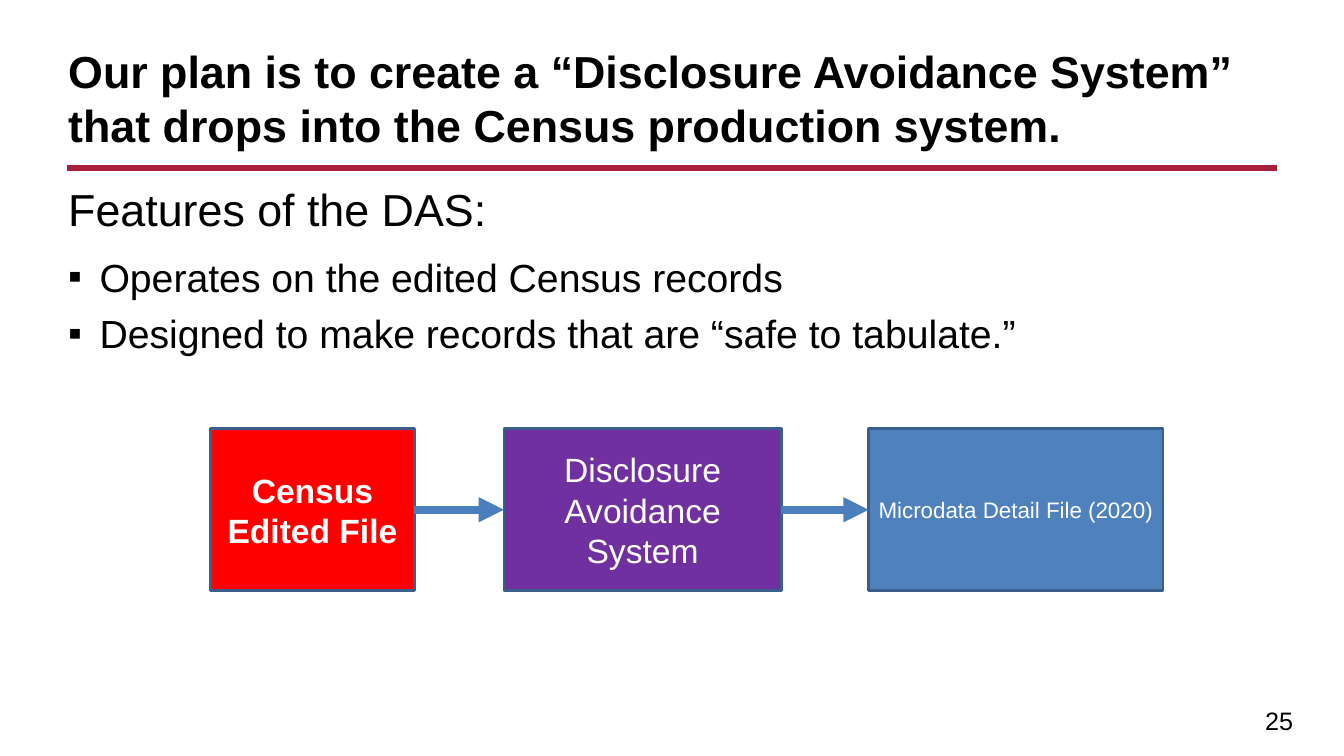
"""Build the Disclosure Avoidance System slide."""
from dataclasses import dataclass

from lxml import etree
from pptx import Presentation
from pptx.dml.color import RGBColor
from pptx.enum import shapes, text
from pptx.oxml import ns
from pptx.util import Cm, Pt

COLORS = {"black": "000000", "white": "FFFFFF", "rule": "A9203D", "red": "FF0000",
          "purple": "7030A0", "blue": "4F81BD", "border": "3A5F8C", "arrow": "4B7EBC"}
BOX_TOP, BOX_HEIGHT = 10.8, 4.09
LEFT, WIDTH = 1.47, 30.68


@dataclass
class Para:
    text: str
    size: float
    color: str = "black"
    bold: bool = False
    bullet: bool = False
    fmt: dict | None = None


@dataclass
class Box:
    left: float
    width: float
    fill: str
    para: Para


@dataclass
class TextBox:
    left: float
    top: float
    width: float
    height: float
    anchor: text.MSO_ANCHOR
    paras: list[Para]


def rgb(name: str) -> RGBColor:
    return RGBColor.from_string(COLORS[name])


def apply(target, fmt: dict) -> None:
    for name, value in fmt.items():
        setattr(target, name, value)


def write(tf, paras: list[Para], anchor: text.MSO_ANCHOR) -> None:
    apply(tf, {"word_wrap": True, "vertical_anchor": anchor})
    for i, para in enumerate(paras):
        p = tf.add_paragraph() if i else tf.paragraphs[0]
        apply(p, para.fmt or {})
        if para.bullet:
            pPr = p._p.get_or_add_pPr()
            pPr.set("marL", str(Cm(0.79)))
            pPr.set("indent", str(-Cm(0.79)))
            etree.SubElement(pPr, ns.qn("a:buFont")).set("typeface", "Arial")
            etree.SubElement(pPr, ns.qn("a:buChar")).set("char", "▪")
        r = p.add_run()
        r.text = para.text
        apply(r.font, {"name": "Arial", "size": Pt(para.size), "bold": para.bold})
        r.font.color.rgb = rgb(para.color)


def add_text(s, box: TextBox) -> None:
    sp = s.shapes.add_textbox(Cm(box.left), Cm(box.top), Cm(box.width), Cm(box.height))
    write(sp.text_frame, box.paras, box.anchor)


def add_box(s, box: Box) -> None:
    sp = s.shapes.add_shape(shapes.MSO_SHAPE.RECTANGLE, Cm(box.left), Cm(BOX_TOP),
                            Cm(box.width), Cm(BOX_HEIGHT))
    sp.shadow.inherit = False
    sp.fill.solid()
    sp.fill.fore_color.rgb = rgb(box.fill)
    sp.line.color.rgb = rgb("border")
    sp.line.width = Pt(2)
    write(sp.text_frame, [box.para], text.MSO_ANCHOR.MIDDLE)


def add_line(s, start: float, end: float, y: float, color: str, width: float,
             arrow: bool = False) -> None:
    cx = s.shapes.add_connector(shapes.MSO_CONNECTOR.STRAIGHT,
                                Cm(start), Cm(y), Cm(end), Cm(y))
    cx.line.color.rgb = rgb(color)
    cx.line.width = Pt(width)
    if arrow:
        etree.SubElement(cx.line._get_or_add_ln(), ns.qn("a:tailEnd")).set("type", "triangle")
    etree.SubElement(cx._element.spPr, ns.qn("a:effectLst"))


def main() -> None:
    prs = Presentation()
    apply(prs, {"slide_width": Cm(33.87), "slide_height": Cm(19.05)})
    s = prs.slides.add_slide(prs.slide_layouts[6])

    bullet_fmt = {"space_before": Pt(6.5)}
    centered = {"alignment": text.PP_ALIGN.CENTER}
    texts = [
        TextBox(LEFT, 0.76, WIDTH, 3.18, text.MSO_ANCHOR.BOTTOM, [
            Para("Our plan is to create a “Disclosure Avoidance System” that drops into "
                 "the Census production system.", 32, bold=True)]),
        TextBox(LEFT, 4.45, WIDTH, 12.57, text.MSO_ANCHOR.TOP, [
            Para("Features of the DAS:", 32, fmt={"space_after": Pt(6)}),
            Para("Operates on the edited Census records", 28, bullet=True, fmt=bullet_fmt),
            Para("Designed to make records that are “safe to tabulate.”", 28,
                 bullet=True, fmt=bullet_fmt)]),
        TextBox(25.65, 17.65, 7.19, 0.99, text.MSO_ANCHOR.TOP, [
            Para("25", 18, fmt={"alignment": text.PP_ALIGN.RIGHT})]),
    ]
    boxes = [
        Box(5.31, 5.13, "red", Para("Census Edited File", 24, "white", True, fmt=centered)),
        Box(12.7, 6.99, "purple",
            Para("Disclosure Avoidance System", 24, "white", fmt=centered)),
        Box(21.89, 7.42, "blue",
            Para("Microdata Detail File (2020)", 16, "white", fmt=centered)),
    ]

    add_line(s, 1.7, 32.18, 4.24, "rule", 4.5)
    for item in texts:
        add_text(s, item)
    for box in boxes:
        add_box(s, box)
    for box, following in zip(boxes, boxes[1:]):
        add_line(s, box.left + box.width, following.left, BOX_TOP + BOX_HEIGHT / 2,
                 "arrow", 6, arrow=True)
    prs.save("out.pptx")


if __name__ == "__main__":
    main()
